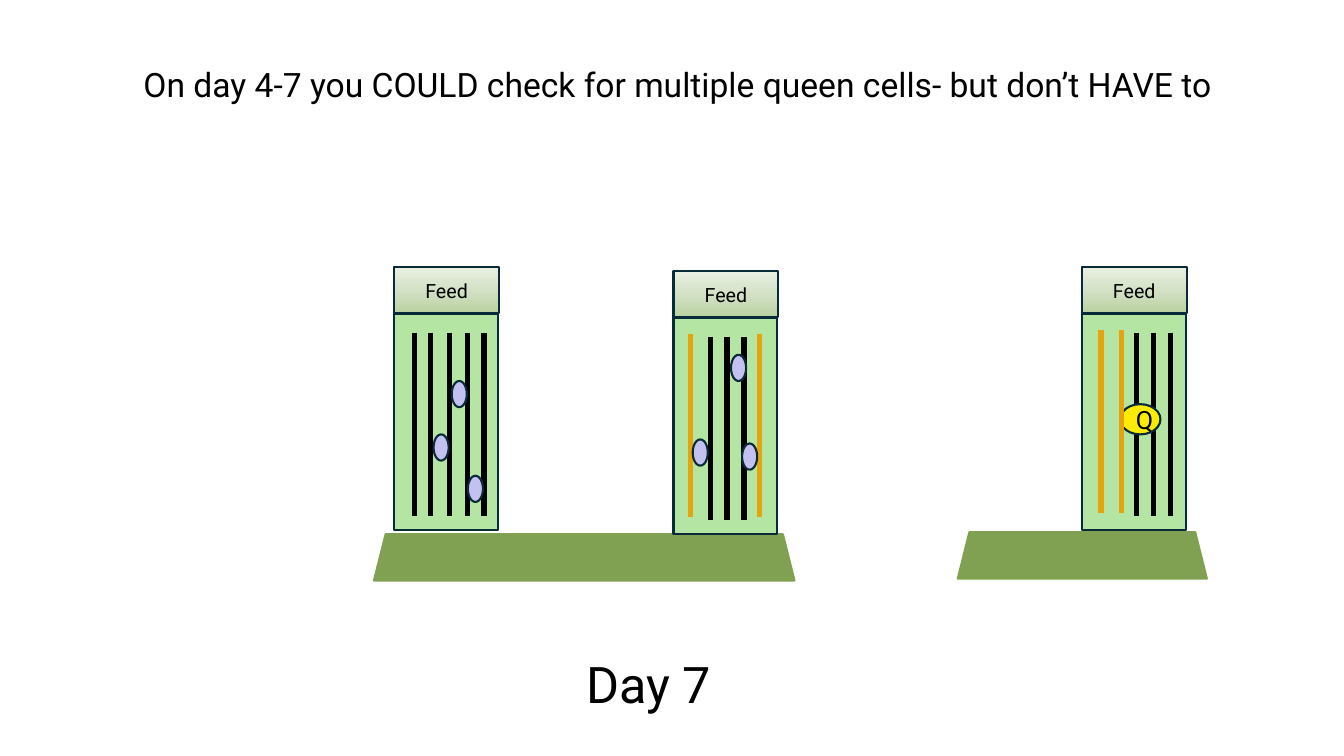
import copy
import lxml.etree
import pptx
import pptx.dml.color
import pptx.enum.shapes
import pptx.enum.text
import pptx.oxml.ns
import pptx.util

RGB = pptx.dml.color.RGBColor
SHAPE = pptx.enum.shapes.MSO_SHAPE
ALIGN = pptx.enum.text.PP_ALIGN
ANCHOR = pptx.enum.text.MSO_ANCHOR
qn = pptx.oxml.ns.qn

BLACK = RGB(0x00, 0x00, 0x00)
NAVY = RGB(0x09, 0x2A, 0x39)
GRASS = RGB(0x80, 0xA1, 0x52)
GREEN = RGB(0xB4, 0xE5, 0xA2)
SAGE = RGB(0xB9, 0xD1, 0xA0)
MIST = RGB(0xD3, 0xE1, 0xC5)
PALE = RGB(0xE9, 0xF0, 0xE3)
HONEY = RGB(0xE5, 0xA3, 0x0D)
LILAC = RGB(0xC2, 0xC1, 0xF0)
YELLOW = RGB(0xFC, 0xEC, 0x03)

COLS, ROWS = 1333, 750
HIVE_W, FEED_H, BODY_H = 103, 46, 215
FRAME_H = 182
FRAME_TOP = {BLACK: 65, HONEY: 62}


def span(count):
    """Turn a count of grid cells into a length."""
    return pptx.util.Inches(count / 100)


def write(frame, text, size, align, anchor):
    """Put one run of text in a text frame."""
    frame.word_wrap = True
    frame.vertical_anchor = anchor
    para = frame.paragraphs[0]
    para.alignment = align
    run = para.add_run()
    run.text = text
    run.font.name = "Roboto"
    run.font.size = pptx.util.Pt(size)
    run.font.color.rgb = BLACK


def block(slide, kind, box, fill, edge=NAVY):
    """Draw a filled and outlined shape."""
    shape = slide.shapes.add_shape(kind, *map(span, box))
    shape.shadow.inherit = False
    shape.fill.solid()
    shape.fill.fore_color.rgb = fill
    shape.line.color.rgb = edge
    shape.line.width = pptx.util.Pt(1.5)
    return shape


def title(slide, box, text):
    """Fill and place the title."""
    head = slide.shapes.title
    head.left, head.top, head.width, head.height = map(span, box)
    write(head.text_frame, text, 24, ALIGN.CENTER, ANCHOR.TOP)
    head.text_frame.auto_size = pptx.enum.text.MSO_AUTO_SIZE.SHAPE_TO_FIT_TEXT


def label(slide, box, text):
    """Add the large day label."""
    frame = slide.shapes.add_textbox(*map(span, box)).text_frame
    write(frame, text, 36, ALIGN.CENTER, ANCHOR.TOP)
    frame.auto_size = pptx.enum.text.MSO_AUTO_SIZE.SHAPE_TO_FIT_TEXT


def feeder(slide, left, top):
    """Draw the shaded feed box on a hive."""
    box = (left, top, HIVE_W + 1, FEED_H)
    shape = block(slide, SHAPE.RECTANGLE, box, SAGE)
    shape.fill.gradient()
    shape.fill.gradient_angle = 90
    stops = shape.fill.gradient_stops
    for stop, tone, place in zip(stops, (SAGE, PALE), (0, 1)):
        stop.color.rgb = tone
        stop.position = place
    first = next(shape._element.spPr.iter(qn("a:gs")))
    first.addnext(copy.deepcopy(first))
    middle = shape.fill.gradient_stops[1]
    middle.color.rgb = MIST
    middle.position = 0.5
    write(shape.text_frame, "Feed", 14, ALIGN.CENTER, ANCHOR.MIDDLE)


def comb(slide, left, top, tone):
    """Draw one upright frame."""
    ends = (left, top, left, top + FRAME_H)
    line = slide.shapes.add_connector(
        pptx.enum.shapes.MSO_CONNECTOR.STRAIGHT, *map(span, ends))
    line.line.color.rgb = tone
    line.line.width = pptx.util.Pt(3.75)
    lxml.etree.SubElement(line._element.spPr, qn("a:effectLst"))


def hive(slide, left, top, dark, gold=(), cells=(), queen=None):
    """Draw a hive with its frames, queen and queen cells."""
    body = (left, top + FEED_H, HIVE_W, BODY_H)
    block(slide, SHAPE.RECTANGLE, body, GREEN)
    for col in dark:
        comb(slide, left + col, top + FRAME_TOP[BLACK], BLACK)
    if queen:
        box = (left + queen[0], top + queen[1], 40, 30)
        shape = block(slide, SHAPE.OVAL, box, YELLOW)
        write(shape.text_frame, "Q", 18, ALIGN.LEFT, ANCHOR.MIDDLE)
    for col in gold:
        comb(slide, left + col, top + FRAME_TOP[HONEY], HONEY)
    feeder(slide, left, top)
    for col, row in cells:
        block(slide, SHAPE.OVAL, (left + col, top + row, 15, 26), LILAC)


def main():
    """Build and save the slide."""
    deck = pptx.Presentation()
    deck.slide_width, deck.slide_height = span(COLS), span(ROWS)
    slide = deck.slides.add_slide(deck.slide_layouts[5])
    title(slide, (121, 58, 1102, 50),
          "On day 4-7 you COULD check for multiple queen cells- "
          "but don’t HAVE to")
    for stand in ((371, 530, 417, 46), (950, 528, 247, 46)):
        block(slide, SHAPE.TRAPEZOID, stand, GRASS, GRASS)
    hive(slide, 391, 265, dark=(20, 36, 55, 73, 89),
         cells=((57, 113), (39, 166), (73, 207)))
    hive(slide, 668, 269, dark=(37, 53, 70), gold=(17, 85),
         cells=((19, 167), (57, 83), (68, 171)))
    hive(slide, 1073, 265, dark=(54, 71, 88), gold=(19, 39),
         queen=(38, 136))
    label(slide, (534, 643, 219, 71), "Day 7")
    deck.save("out.pptx")


if __name__ == "__main__":
    main()
